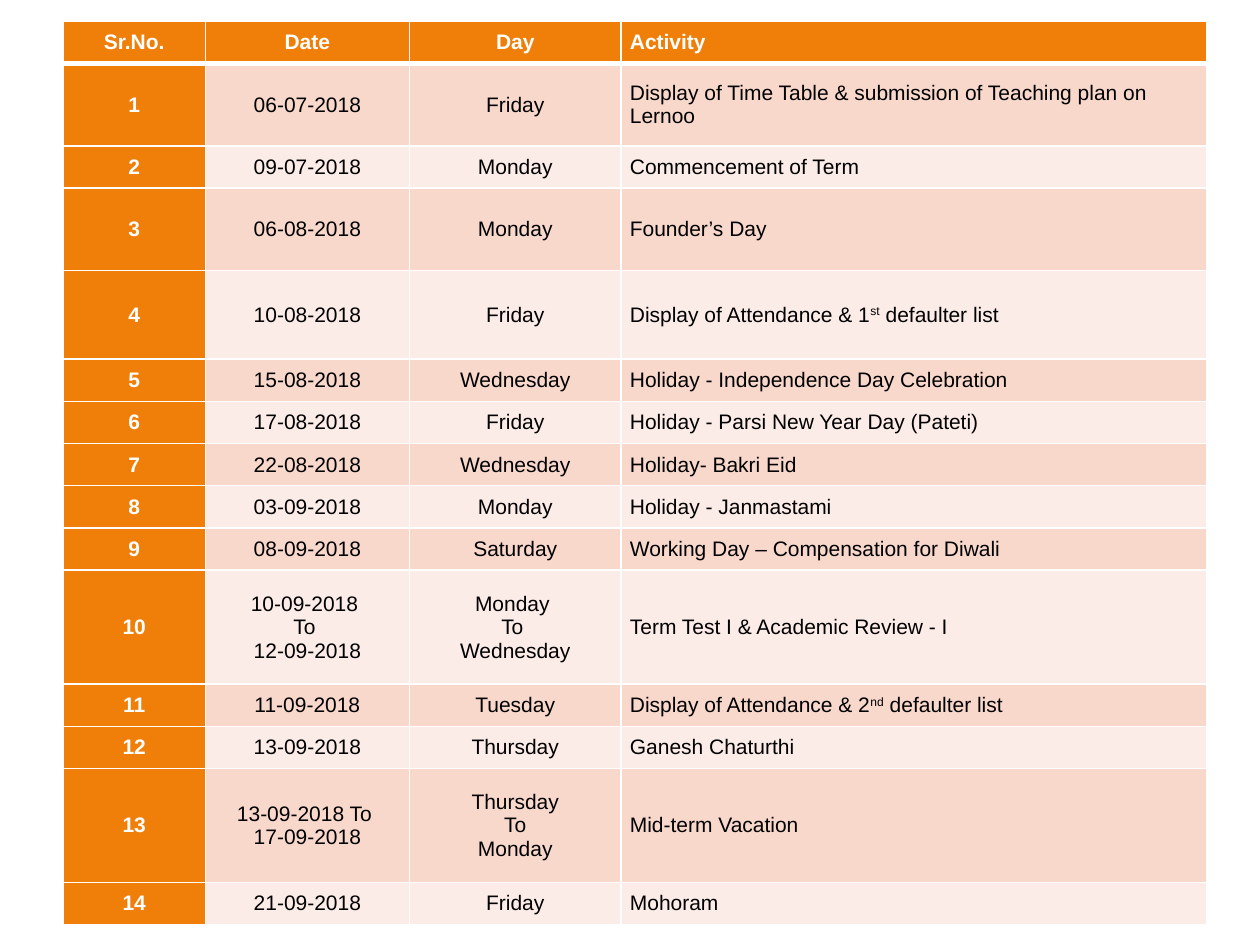
from lxml import etree
from pptx import Presentation
from pptx import util as u
from pptx.dml.color import RGBColor
from pptx.enum import text
from pptx.oxml import ns

ORANGE = RGBColor(0xF0, 0x7F, 0x09)
PEACH = RGBColor(0xF9, 0xD8, 0xCC)
PALE = RGBColor(0xFC, 0xEC, 0xE7)
WHITE = RGBColor(0xFF, 0xFF, 0xFF)
BLACK = RGBColor(0x00, 0x00, 0x00)

HEADINGS = ("Sr.No.", "Date", "Day", "Activity")
# Height in grid lines, date, day, activity; ^ encloses a superscript
EVENTS = [
    (1.95, "06-07-2018", "Friday", "Display of Time Table & submission of Teaching plan on Lernoo"),
    (1, "09-07-2018", "Monday", "Commencement of Term"),
    (1.95, "06-08-2018", "Monday", "Founder’s Day"),
    (2.1, "10-08-2018", "Friday", "Display of Attendance & 1^st^ defaulter list"),
    (1, "15-08-2018", "Wednesday", "Holiday - Independence Day Celebration"),
    (1, "17-08-2018", "Friday", "Holiday - Parsi New Year Day (Pateti)"),
    (1, "22-08-2018", "Wednesday", "Holiday- Bakri Eid"),
    (1, "03-09-2018", "Monday", "Holiday - Janmastami"),
    (1, "08-09-2018", "Saturday", "Working Day – Compensation for Diwali"),
    (2.7, "10-09-2018 \nTo \n12-09-2018", "Monday \nTo \nWednesday",
     "Term Test I & Academic Review - I"),
    (1, "11-09-2018", "Tuesday", "Display of Attendance & 2^nd^ defaulter list"),
    (1, "13-09-2018", "Thursday", "Ganesh Chaturthi"),
    (2.7, "13-09-2018 To \n17-09-2018", "Thursday\nTo\nMonday", "Mid-term Vacation"),
    (1, "21-09-2018", "Friday", "Mohoram"),
]
COLUMN_WIDTHS = (1.13, 1.62, 1.68, 4.65)
CALENDAR_HEIGHT = 7.17


def add_border(cell, side, points):
    properties = cell._tc.get_or_add_tcPr()
    line = etree.SubElement(properties, ns.qn(f"a:ln{side}"), w=str(u.Pt(points)))
    paint = etree.SubElement(line, ns.qn("a:solidFill"))
    etree.SubElement(paint, ns.qn("a:srgbClr"), val=str(WHITE))


def write_entry(cell, entry, centred, bold, colour):
    """Fill a cell with text, raising what stands between ^ marks."""
    frame = cell.text_frame
    frame.text = entry
    for paragraph in frame.paragraphs:
        pieces = paragraph.text.split("^")
        paragraph.text = pieces[0]
        for piece in pieces[1:]:
            paragraph.add_run().text = piece
        paragraph.alignment = text.PP_ALIGN.CENTER if centred else text.PP_ALIGN.LEFT
        for position, run in enumerate(paragraph.runs):
            run.font.name = "Arial"
            run.font.size = u.Pt(12)
            run.font.bold = bold
            run.font.color.rgb = colour
            if position % 2:
                run._r.get_or_add_rPr().set("baseline", "30000")


prs = Presentation()
prs.slide_width, prs.slide_height = u.Inches(10), u.Inches(7.5)
slide = prs.slides.add_slide(prs.slide_layouts[6])

rows = [(1, *HEADINGS)]
rows += [(lines, str(number), *event) for number, (lines, *event) in enumerate(EVENTS, 1)]
grid_line = CALENDAR_HEIGHT / sum(row[0] for row in rows)

calendar = slide.shapes.add_table(
    len(rows), len(HEADINGS), u.Inches(0.5), u.Inches(0.17),
    u.Inches(sum(COLUMN_WIDTHS)), u.Inches(CALENDAR_HEIGHT)).table
for column, width in zip(calendar.columns, COLUMN_WIDTHS):
    column.width = u.Inches(width)

for r, (lines, *entries) in enumerate(rows):
    calendar.rows[r].height = u.Inches(lines * grid_line)
    for c, entry in enumerate(entries):
        cell = calendar.cell(r, c)
        heading = r == 0 or c == 0
        cell.margin_left = cell.margin_right = u.Inches(0.07)
        cell.margin_top = cell.margin_bottom = 0
        cell.vertical_anchor = text.MSO_ANCHOR.MIDDLE
        add_border(cell, "L", 1)
        add_border(cell, "R", 1)
        add_border(cell, "T", 3 if r == 1 else 1)
        add_border(cell, "B", 3 if r == 0 else 1)
        cell.fill.solid()
        cell.fill.fore_color.rgb = ORANGE if heading else (PEACH if r % 2 else PALE)
        write_entry(cell, entry, c < 3, heading, WHITE if heading else BLACK)

prs.save("out.pptx")
